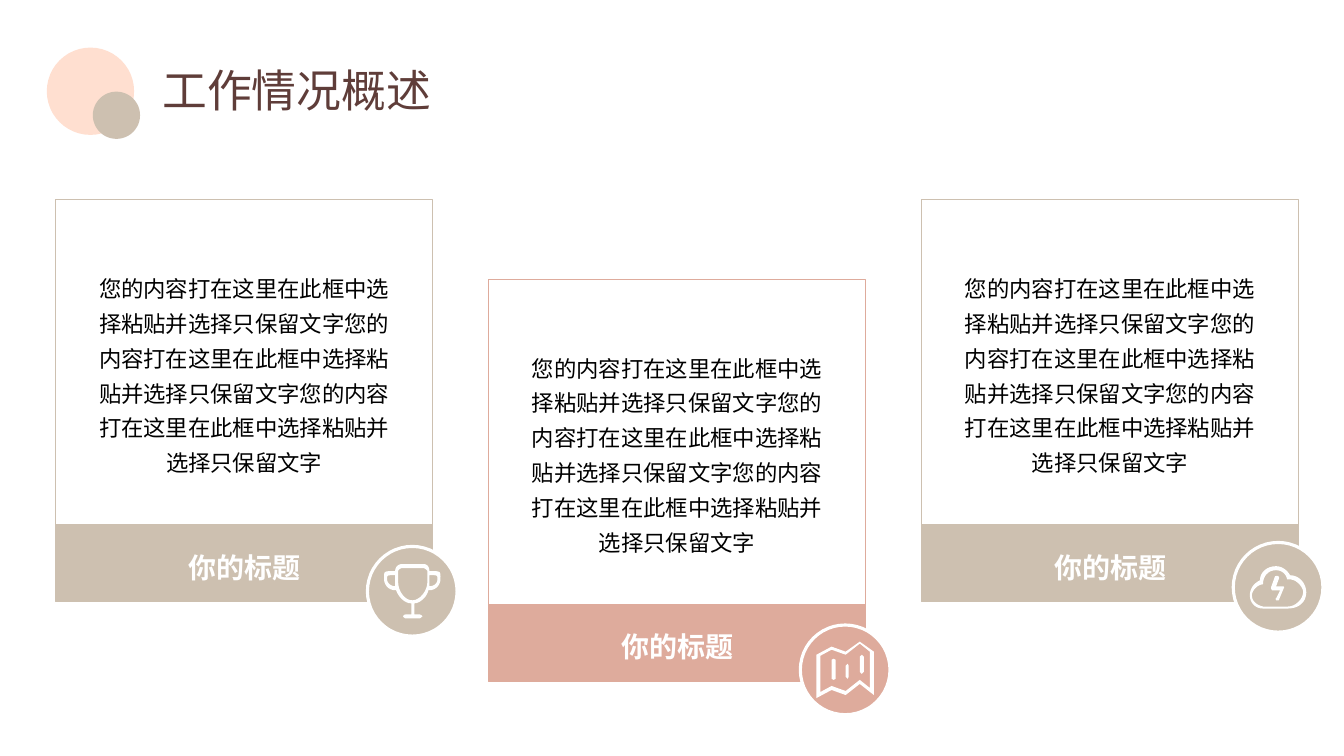
from lxml import etree
from pptx import Presentation
from pptx import util as u
from pptx.dml.color import RGBColor
from pptx.enum import shapes, text
from pptx.oxml import ns

PEACH = RGBColor(0xFF, 0xDF, 0xD0)
TAUPE = RGBColor(0xCD, 0xC0, 0xB0)
ROSE = RGBColor(0xDE, 0xAB, 0x9C)
BROWN = RGBColor(0x5F, 0x3D, 0x39)
WHITE = RGBColor(0xFF, 0xFF, 0xFF)
BLACK = RGBColor(0x00, 0x00, 0x00)

FONT = "Noto Sans CJK SC"
BODY = "您的内容打在这里在此框中选择粘贴并选择只保留文字" * 3
CARD_LEFT, CARD_STEP, CARD_WIDTH = 1.4, 10.91, 9.5
BADGE_SIZE = 2.26
ICON_UNIT = 0.0254
PRECISION = 100
CURVE_STEPS = 8

TROPHY = [
    [(46, 7), (46, 3, 44, 0, 40, 0), (19, 0), (15, 0, 12, 3, 12, 7),
     (0, 7, 1, 7, 1, 15), (1, 20, 5, 26, 12, 26), (13, 26),
     (15, 32, 21, 39, 28, 39), (28, 50), (23, 50), (21, 50, 20, 51, 20, 52),
     (20, 52, 21, 54, 23, 54), (36, 54), (37, 54, 39, 52, 39, 52),
     (39, 51, 37, 50, 36, 50), (31, 50), (31, 39), (37, 39, 44, 32, 45, 26),
     (46, 26), (53, 26, 57, 20, 57, 15), (57, 7, 58, 7, 46, 7)],
    [(12, 22), (8, 22, 4, 19, 4, 15), (4, 11, 4, 11, 12, 11)],
    [(44, 18), (44, 26, 37, 36, 29, 36), (21, 36, 15, 26, 15, 18), (15, 7),
     (15, 6, 17, 4, 19, 4), (40, 4), (41, 4, 44, 6, 44, 7)],
    [(46, 22), (46, 11), (54, 11, 54, 11, 54, 15), (54, 19, 51, 22, 46, 22)],
]
MAP = [
    [(43, 0), (29, 10), (15, 5), (0, 13), (0, 56), (15, 48), (29, 53),
     (43, 42), (57, 53), (57, 10)],
    [(53, 46), (43, 38), (29, 49), (15, 44), (4, 50), (4, 14), (15, 8),
     (29, 13), (43, 2), (53, 10)],
    [(15, 18), (17, 17), (19, 18), (19, 37), (17, 38), (15, 37)],
    [(29, 24), (31, 22), (32, 24), (32, 35), (31, 37), (29, 35)],
    [(43, 15), (45, 13), (47, 15), (47, 30), (45, 32), (43, 30)],
]
CLOUD = [
    [(33, 20), (26, 20), (29, 12), (29, 12, 29, 10, 28, 10),
     (26, 9, 26, 10, 25, 10), (21, 21), (21, 22), (22, 24), (30, 24), (26, 32),
     (25, 32, 26, 33, 26, 34), (28, 34, 29, 34, 29, 33), (34, 21),
     (34, 21, 34, 20, 33, 20)],
    [(40, 9), (37, 4, 32, 0, 26, 0), (17, 0, 10, 6, 10, 14),
     (4, 17, 0, 22, 0, 29), (0, 36, 5, 42, 13, 42), (38, 42),
     (48, 42, 56, 36, 56, 26), (56, 17, 49, 9, 40, 9)],
    [(38, 40), (13, 40), (13, 40, 2, 38, 2, 29), (2, 24, 8, 18, 13, 18),
     (13, 10, 18, 4, 26, 4), (32, 4, 36, 8, 37, 13), (46, 12, 52, 20, 53, 25),
     (53, 33, 45, 40, 38, 40)],
]


def style(shape, fill=None, line=None, width=1):
    shape.shadow.inherit = False
    if fill is None:
        shape.fill.background()
    else:
        shape.fill.solid()
        shape.fill.fore_color.rgb = fill
    if line is None:
        shape.line.fill.background()
    else:
        shape.line.color.rgb = line
        shape.line.width = u.Pt(width)


def add_preset(slide, preset, box, fill=None, line=None, width=1):
    shape = slide.shapes.add_shape(preset, *map(u.Cm, box))
    style(shape, fill, line, width)
    return shape


def add_text(slide, box, content, size, color, bold=False, spacing=None,
             align=text.PP_ALIGN.CENTER, anchor=text.MSO_ANCHOR.TOP):
    frame = slide.shapes.add_textbox(*map(u.Cm, box)).text_frame
    frame.word_wrap = True
    frame.vertical_anchor = anchor
    paragraph = frame.paragraphs[0]
    paragraph.alignment = align
    paragraph.line_spacing = spacing
    run = paragraph.add_run()
    run.text = content
    run.font.size = u.Pt(size)
    run.font.bold = bold
    run.font.color.rgb = color
    run.font.name = FONT
    east_asian = etree.SubElement(run._r.get_or_add_rPr(), ns.qn("a:ea"))
    east_asian.set("typeface", FONT)


def flatten(contour):
    points = [contour[0]]
    for segment in contour[1:]:
        if len(segment) == 2:
            points.append(segment)
            continue
        controls = [points[-1], segment[:2], segment[2:4], segment[4:]]
        for step in range(1, CURVE_STEPS + 1):
            t = step / CURVE_STEPS
            weights = ((1 - t) ** 3, 3 * t * (1 - t) ** 2,
                       3 * t ** 2 * (1 - t), t ** 3)
            points.append(tuple(sum(w * c[axis] for w, c in zip(weights, controls))
                                for axis in (0, 1)))
    return [(round(x * PRECISION), round(y * PRECISION)) for x, y in points]


def add_icon(slide, contours, badge):
    outlines = [flatten(contour) for contour in contours]
    builder = slide.shapes.build_freeform(
        *outlines[0][0], scale=u.Cm(ICON_UNIT) / PRECISION)
    for index, points in enumerate(outlines):
        if index:
            builder.move_to(*points[0])
        builder.add_line_segments(points[1:], close=True)
    icon = builder.convert_to_shape()
    icon.left = badge.left + (badge.width - icon.width) // 2
    icon.top = badge.top + (badge.height - icon.height) // 2
    style(icon, WHITE)


def add_card(slide, column, top, color, badge_drop, icon):
    left = CARD_LEFT + column * CARD_STEP
    rectangle = shapes.MSO_SHAPE.RECTANGLE
    add_preset(slide, rectangle, (left, top, CARD_WIDTH, 8.25), line=color)
    add_preset(slide, rectangle, (left, top + 8.2, CARD_WIDTH, 1.93), color, color)
    add_text(slide, (left + 0.6, top + 1.57, 8.31, 5.51), BODY, 16, BLACK, spacing=1.3)
    add_text(slide, (left + 2.04, top + 8.71, 5.44, 1.12), "你的标题", 20, WHITE, bold=True)
    badge = add_preset(slide, shapes.MSO_SHAPE.OVAL,
                       (left + 7.86, top + badge_drop, BADGE_SIZE, BADGE_SIZE),
                       color, WHITE, 2.25)
    add_icon(slide, icon, badge)


def add_heading(slide, title):
    oval = shapes.MSO_SHAPE.OVAL
    add_preset(slide, oval, (1.18, 1.2, 2.2, 2.2), PEACH)
    add_preset(slide, oval, (2.34, 2.31, 1.19, 1.19), TAUPE)
    add_text(slide, (3.84, 1.37, 29.21, 1.93), title, 32, BROWN, spacing=0.9,
             align=text.PP_ALIGN.LEFT, anchor=text.MSO_ANCHOR.MIDDLE)


def main():
    presentation = Presentation()
    presentation.slide_width = u.Cm(33.87)
    presentation.slide_height = u.Cm(19.05)
    slide = presentation.slides.add_slide(presentation.slide_layouts[6])
    add_heading(slide, "工作情况概述")
    add_card(slide, 0, 5.03, TAUPE, 8.74, TROPHY)
    add_card(slide, 2, 5.03, TAUPE, 8.64, CLOUD)
    add_card(slide, 1, 7.04, ROSE, 8.71, MAP)
    presentation.save("out.pptx")


if __name__ == "__main__":
    main()
